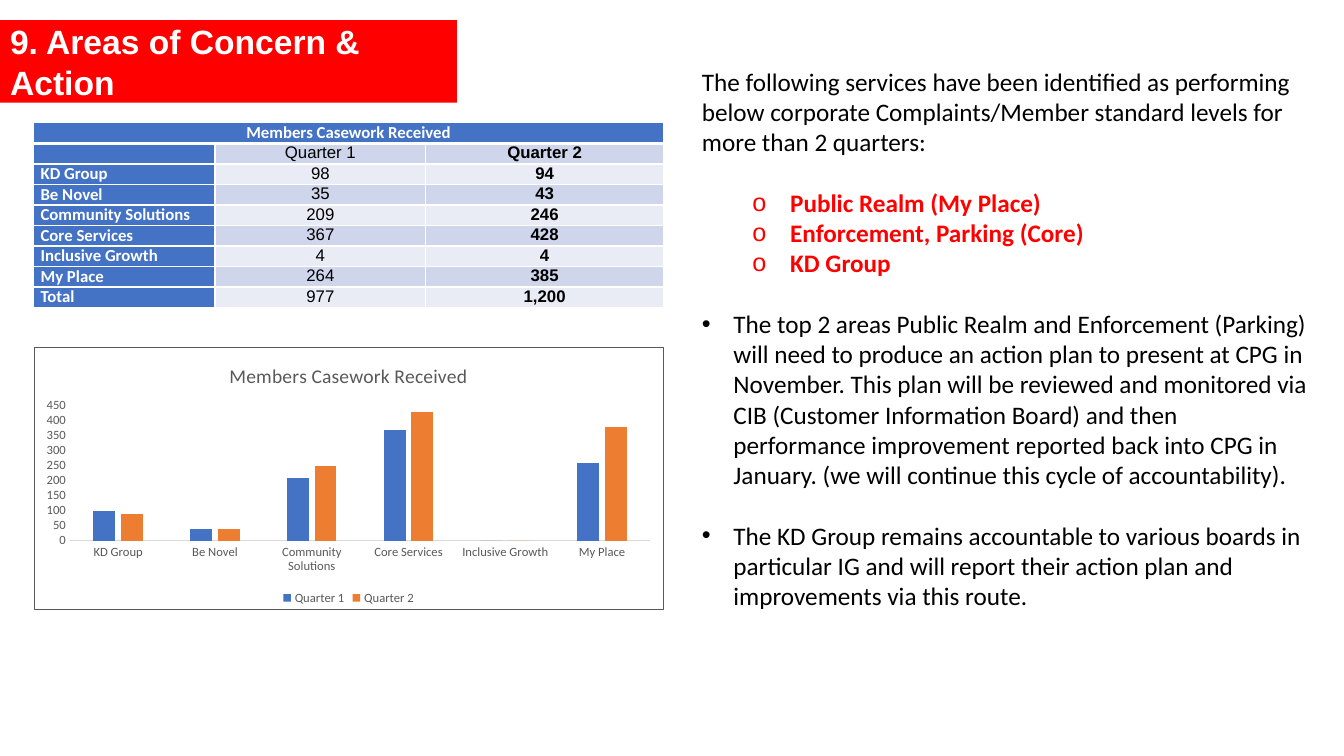
from lxml.etree import SubElement
from pptx import Presentation
from pptx.chart.data import CategoryChartData
from pptx.dml.color import RGBColor
from pptx.enum.chart import XL_CHART_TYPE, XL_LEGEND_POSITION, XL_TICK_MARK
from pptx.enum.text import MSO_ANCHOR, MSO_AUTO_SIZE, PP_ALIGN
from pptx.oxml import parse_xml
from pptx.oxml.ns import nsdecls, qn
from pptx.util import Pt

COLORS = {
    "red": "FF0000", "white": "FFFFFF", "black": "000000", "blue": "4472C4",
    "orange": "ED7D31", "dark_band": "CFD5EA", "light_band": "E9EBF5",
    "gray": "595959", "axis": "D9D9D9",
}
CASEWORK_TITLE = "Members Casework Received"
QUARTERS = ("Quarter 1", "Quarter 2")
CASEWORK = {
    "KD Group": (98, 94), "Be Novel": (35, 43), "Community Solutions": (209, 246),
    "Core Services": (367, 428), "Inclusive Growth": (4, 4), "My Place": (264, 385),
}
COLUMN_WIDTHS = (129.6, 150.5, 169.9)
ROW_HEIGHT = 14.4
LEFT, PANEL_WIDTH = 24, 450
CHART_TOP, CHART_HEIGHT = 248, 187.5
LINE_GAP = 21.6

PARAGRAPHS = (
    ("The following services have been identified as performing below corporate "
     "Complaints/Member standard levels for more than 2 quarters:", "plain", LINE_GAP),
    ("Public Realm (My Place)", "service", 0),
    ("Enforcement, Parking (Core)", "service", 0),
    ("KD Group", "service", LINE_GAP),
    ("The top 2 areas Public Realm and Enforcement (Parking) will need to produce an "
     "action plan to present at CPG in November. This plan will be reviewed and monitored "
     "via CIB (Customer Information Board) and then performance improvement reported back "
     "into CPG in January. (we will continue this cycle of accountability).",
     "point", LINE_GAP),
    ("The KD Group remains accountable to various boards in particular IG and will report "
     "their action plan and improvements via this route.", "point", 0),
)
BULLETS = {"service": ("o", 63, 27), "point": ("•", 22.5, 22.5)}


def rgb(name):
    return RGBColor.from_string(COLORS[name])


def style_font(font, size, color, name="Calibri", bold=False):
    font.size, font.name, font.bold = Pt(size), name, bold
    font.color.rgb = rgb(color)


def add_run(paragraph, text, *style):
    run = paragraph.add_run()
    run.text = text
    style_font(run.font, *style)


def format_title(title):
    title.left, title.top, title.width, title.height = Pt(0), Pt(14.4), Pt(326.4), Pt(59)
    title.fill.solid()
    title.fill.fore_color.rgb = rgb("red")
    frame = title.text_frame
    frame.word_wrap = True
    frame.auto_size = MSO_AUTO_SIZE.NONE
    frame.vertical_anchor = MSO_ANCHOR.MIDDLE
    paragraph = frame.paragraphs[0]
    paragraph.alignment = PP_ALIGN.LEFT
    add_run(paragraph, "9. Areas of Concern & Action", 24, "white", "Arial", True)


def set_borders(cell, top, bottom):
    properties = cell._tc.get_or_add_tcPr()
    widths = {"lnL": 1, "lnR": 1, "lnT": top, "lnB": bottom}
    for position, (side, width) in enumerate(widths.items()):
        properties.insert(position, parse_xml(
            f'<a:{side} {nsdecls("a")} w="{Pt(width)}"><a:solidFill>'
            f'<a:srgbClr val="{COLORS["white"]}"/></a:solidFill></a:{side}>'))


def fill_cell(cell, text, row, column):
    cell.margin_left = cell.margin_right = Pt(5)
    cell.margin_top = cell.margin_bottom = Pt(0)
    heading = row == 0 or column == 0
    band = "dark_band" if row % 2 else "light_band"
    cell.fill.solid()
    cell.fill.fore_color.rgb = rgb("blue" if heading else band)
    set_borders(cell, 3 if row == 1 else 1, 3 if row == 0 else 1)
    paragraph = cell.text_frame.paragraphs[0]
    paragraph.alignment = PP_ALIGN.LEFT if column == 0 and row else PP_ALIGN.CENTER
    paragraph.font.size = Pt(12)
    if text and heading:
        add_run(paragraph, text, 12, "white", "Calibri", True)
    elif text:
        add_run(paragraph, text, 12, "black", "Arial", column == 2)


def add_casework_table(slide):
    totals = [sum(values) for values in zip(*CASEWORK.values())]
    rows = [(CASEWORK_TITLE, "", ""), ("", *QUARTERS)]
    for service, values in [*CASEWORK.items(), ("Total", totals)]:
        rows.append((service, *(f"{value:,}" for value in values)))
    table = slide.shapes.add_table(
        len(rows), len(COLUMN_WIDTHS), Pt(LEFT), Pt(87.8),
        Pt(PANEL_WIDTH), Pt(ROW_HEIGHT * len(rows))).table
    for column, width in zip(table.columns, COLUMN_WIDTHS):
        column.width = Pt(width)
    for row_index, texts in enumerate(rows):
        table.rows[row_index].height = Pt(ROW_HEIGHT)
        for column_index, text in enumerate(texts):
            fill_cell(table.cell(row_index, column_index), text, row_index, column_index)
    table.cell(0, 0).merge(table.cell(0, 2))


def frame_chart(chart):
    chart_element = chart.element.find(qn("c:chart"))
    chart_element.addnext(parse_xml(
        f'<c:spPr {nsdecls("c", "a")}><a:noFill/><a:ln w="{Pt(0.75)}"><a:solidFill>'
        f'<a:srgbClr val="{COLORS["gray"]}"/></a:solidFill></a:ln></c:spPr>'))
    plot_area = chart_element.find(qn("c:plotArea"))
    layout = plot_area.find(qn("c:layout"))
    if layout is None:
        layout = plot_area.makeelement(qn("c:layout"))
        plot_area.insert(0, layout)
    manual = SubElement(layout, qn("c:manualLayout"))
    settings = {"layoutTarget": "inner", "xMode": "edge", "yMode": "edge",
                "x": 25.5 / PANEL_WIDTH, "y": 41.5 / CHART_HEIGHT,
                "w": 415.5 / PANEL_WIDTH, "h": 97 / CHART_HEIGHT}
    for name, value in settings.items():
        SubElement(manual, qn(f"c:{name}")).set("val", str(value))


def add_casework_chart(slide):
    data = CategoryChartData()
    data.categories = list(CASEWORK)
    for quarter, values in zip(QUARTERS, zip(*CASEWORK.values())):
        data.add_series(quarter, [round(value, -1) for value in values])
    chart = slide.shapes.add_chart(
        XL_CHART_TYPE.COLUMN_CLUSTERED, Pt(LEFT), Pt(CHART_TOP),
        Pt(PANEL_WIDTH), Pt(CHART_HEIGHT), data).chart
    style_font(chart.font, 10, "black")
    add_run(chart.chart_title.text_frame.paragraphs[0], CASEWORK_TITLE, 14, "gray")
    chart.chart_title.include_in_layout = False
    chart.has_legend = True
    chart.legend.position = XL_LEGEND_POSITION.BOTTOM
    chart.legend.include_in_layout = False
    style_font(chart.legend.font, 9, "gray")
    plot = chart.plots[0]
    plot.gap_width, plot.overlap, plot.vary_by_categories = 219, -27, False
    for series, color in zip(plot.series, ("blue", "orange")):
        series.format.fill.solid()
        series.format.fill.fore_color.rgb = rgb(color)
    for axis in (chart.category_axis, chart.value_axis):
        axis.major_tick_mark = axis.minor_tick_mark = XL_TICK_MARK.NONE
        axis.has_major_gridlines = False
        style_font(axis.tick_labels.font, 9, "gray")
    chart.category_axis.format.line.color.rgb = rgb("axis")
    chart.category_axis.format.line.width = Pt(0.75)
    chart.value_axis.format.line.fill.background()
    chart.value_axis.minimum_scale, chart.value_axis.maximum_scale = 0, 450
    chart.value_axis.major_unit = 50
    frame_chart(chart)


def add_bullet(paragraph, character, margin, hanging):
    properties = paragraph._p.get_or_add_pPr()
    properties.set("marL", str(Pt(margin)))
    properties.set("indent", str(-Pt(hanging)))
    SubElement(properties, qn("a:buFont")).set("typeface", "Arial")
    SubElement(properties, qn("a:buChar")).set("char", character)


def add_commentary(slide):
    frame = slide.shapes.add_textbox(Pt(494.3), Pt(43.8), Pt(450), Pt(421.9)).text_frame
    frame.word_wrap = True
    for index, (text, kind, gap) in enumerate(PARAGRAPHS):
        paragraph = frame.add_paragraph() if index else frame.paragraphs[0]
        paragraph.space_after = Pt(gap)
        service = kind == "service"
        if service:
            paragraph.level = 1
        if kind in BULLETS:
            add_bullet(paragraph, *BULLETS[kind])
        add_run(paragraph, text, 18, "red" if service else "black", "Calibri", service)


def main():
    presentation = Presentation()
    presentation.slide_width, presentation.slide_height = Pt(960), Pt(540)
    slide = presentation.slides.add_slide(presentation.slide_layouts[5])
    format_title(slide.shapes.title)
    add_casework_table(slide)
    add_casework_chart(slide)
    add_commentary(slide)
    presentation.save("out.pptx")


if __name__ == "__main__":
    main()
